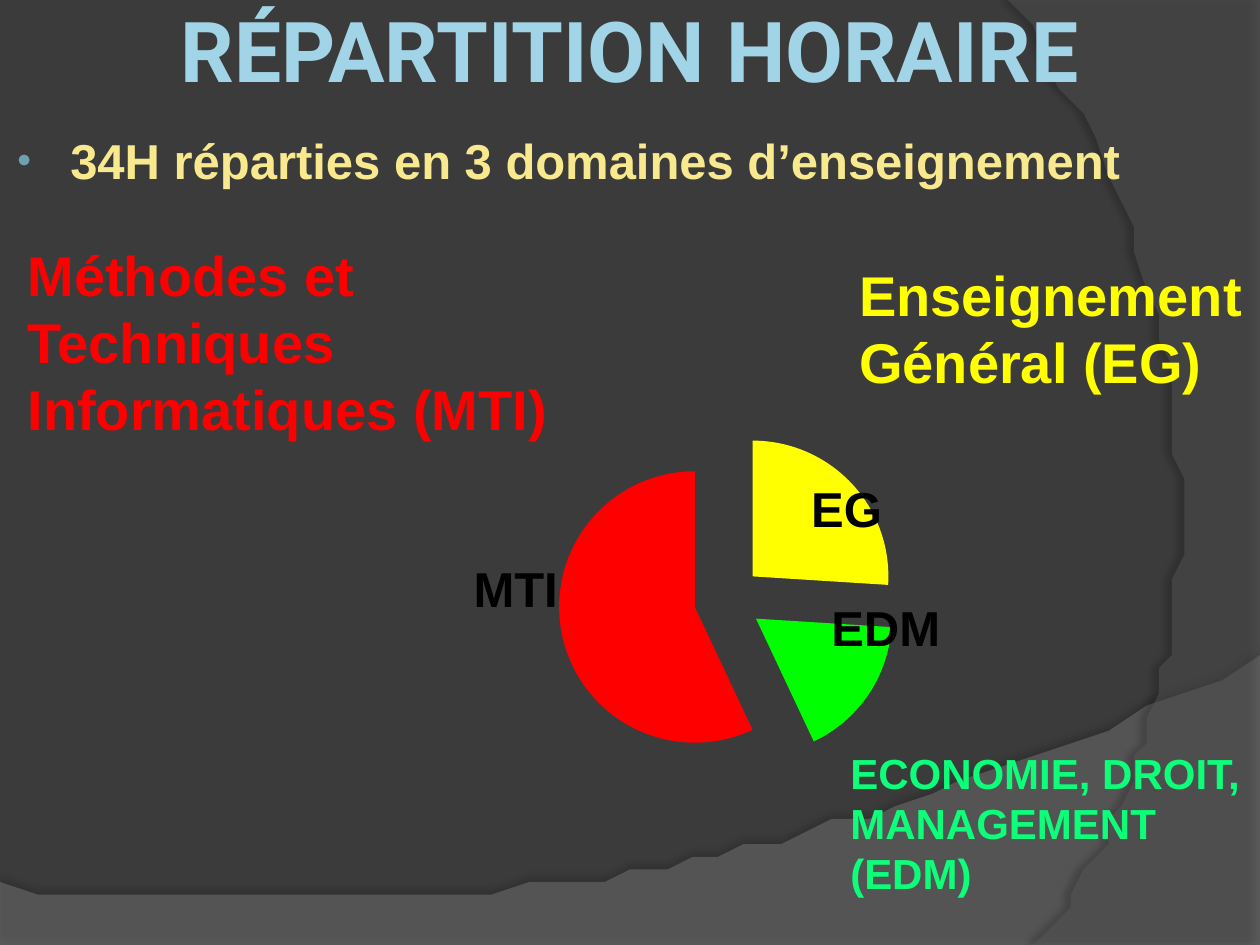
"""Build the slide on how 34 weekly hours split over three teaching domains."""
from lxml import etree
from pptx import Presentation
from pptx.chart.data import CategoryChartData as ChartData
from pptx.dml.color import RGBColor
from pptx.enum.chart import XL_CHART_TYPE as ChartType
from pptx.enum.text import MSO_ANCHOR as Anchor, MSO_AUTO_SIZE as AutoSize, PP_ALIGN as Align
from pptx.oxml import parse_xml
from pptx.oxml.ns import qn
from pptx.util import Inches, Pt

NS_A = 'xmlns:a="http://schemas.openxmlformats.org/drawingml/2006/main"'
NS_C = 'xmlns:c="http://schemas.openxmlformats.org/drawingml/2006/chart"'

deck = Presentation()
deck.slide_width, deck.slide_height = Inches(10), Inches(7.5)
column, row = deck.slide_width / 100, deck.slide_height / 75
page = deck.slides.add_slide(deck.slide_layouts[6])


def paint(fill, color):
    fill.solid()
    fill.fore_color.rgb = RGBColor.from_string(color)


def add_text(text, place, size, color, font="Arial", wrap=True):
    left, top, width, height = place
    box = page.shapes.add_textbox(
        int(left * column), int(top * row), int(width * column), int(height * row))
    frame = box.text_frame
    frame.text = text
    frame.word_wrap = wrap
    frame.auto_size = AutoSize.SHAPE_TO_FIT_TEXT
    style = frame.paragraphs[0].runs[0].font
    style.name, style.size, style.bold = font, Pt(size), True
    paint(style.fill, color)
    return frame


paint(page.background.fill, "3B3B3B")

waves = [
    ([(0, 70.5), (0, 75), (100, 75), (100, 52)],
     [(100, 52), (55.9, 72.9), (39.1, 71.9), (0, 70.5)],
     "7F7F7F", 45, (35, 3.5, 270)),
    ([(80, 0), (100, 0.2), (100, 75), (82.1, 75)],
     [(82.1, 75), (93.5, 61.9), (101.8, 30), (80, 0)],
     "5E5E5E", 40, (45, 4, 180)),
]
for corners, curve, color, opacity, (shade, distance, angle) in waves:
    points = list(corners)
    for step in range(1, 40):
        t = step / 40
        weights = ((1 - t) ** 3, 3 * t * (1 - t) ** 2, 3 * t ** 2 * (1 - t), t ** 3)
        points.append(tuple(sum(w * p[axis] for w, p in zip(weights, curve)) for axis in (0, 1)))
    builder = page.shapes.build_freeform(*points[0], scale=(column, row))
    builder.add_line_segments(points[1:], close=True)
    wave = builder.convert_to_shape()
    paint(wave.fill, color)
    wave.line.fill.background()
    tint = wave.fill._xPr.find(qn("a:solidFill"))[0]
    etree.SubElement(tint, qn("a:alpha"), val=str(opacity * 1000))
    wave._element.spPr.append(parse_xml(
        f'<a:effectLst {NS_A}><a:outerShdw blurRad="{Pt(4)}" dist="{Pt(distance)}" '
        f'dir="{angle * 60000}" algn="ctr" rotWithShape="0"><a:srgbClr val="000000">'
        f'<a:alpha val="{shade * 1000}"/></a:srgbClr></a:outerShdw></a:effectLst>'))

title = add_text("RÉPARTITION HORAIRE", (0, 0, 100, 7.8), 48, "A1D4E7", "Roboto")
title.auto_size = AutoSize.NONE
title.vertical_anchor = Anchor.MIDDLE
title.margin_left = title.margin_right = Inches(0.05)
title.paragraphs[0].alignment = Align.CENTER

summary = add_text("34H réparties en 3 domaines d’enseignement", (0, 9.9, 100, 6.3), 28, "F9E98E")
summary.auto_size = AutoSize.NONE
para = summary.paragraphs[0]
para.space_before = Pt(5.6)
bullet = para._p.get_or_add_pPr()
bullet.set("marL", str(Inches(0.46)))
bullet.set("indent", str(Inches(-0.42)))
etree.SubElement(etree.SubElement(bullet, qn("a:buClr")), qn("a:srgbClr"), val="6EA0B0")
etree.SubElement(bullet, qn("a:buSzPct"), val="80000")
etree.SubElement(bullet, qn("a:buFont"), typeface="Arial")
etree.SubElement(bullet, qn("a:buChar"), char="•")

hours = ChartData()
hours.categories = ["1", "2", "3"]
hours.add_series("Series 1", (26, 17, 57))
chart = page.shapes.add_chart(
    ChartType.PIE, int(7.5 * column), int(28.1 * row),
    int(90.6 * column), int(40.2 * row), hours).chart
chart.has_legend = chart.has_title = False
chart.font.name, chart.font.size, chart.font.bold = "Lato", Pt(23.6), True
paint(chart.font.fill, "FFFFFF")
pie = chart.plots[0]
pie.vary_by_categories = True
series = pie.series[0]
for index, color in enumerate(("FFFF00", "00FF00", "FF0000")):
    slice_format = series.points[index].format
    paint(slice_format.fill, color)
    slice_format.line.fill.background()
series._element.find(qn("c:dPt")).addprevious(parse_xml(f'<c:explosion {NS_C} val="25"/>'))
plot_area = chart._chartSpace.chart.plotArea
for layout in plot_area.findall(qn("c:layout")):
    plot_area.remove(layout)
plot_area.insert(0, parse_xml(
    f'<c:layout {NS_C}><c:manualLayout><c:layoutTarget val="inner"/>'
    '<c:xMode val="edge"/><c:yMode val="edge"/><c:x val="0.16"/><c:y val="0.15"/>'
    '<c:w val="0.79"/><c:h val="0.67"/></c:manualLayout></c:layout>'))

for text, place, size, color in (
    ("ECONOMIE, DROIT, MANAGEMENT (EDM)", (66.5, 58.8, 33.5, 13.1), 24, "0DFF7A"),
    ("Méthodes et Techniques Informatiques (MTI)", (1.2, 18.6, 44.1, 17.2), 32, "FF0000"),
    ("Enseignement Général (EG)", (67.2, 20.2, 32.8, 11.8), 32, "FFFF00"),
):
    add_text(text, place, size, color)

for text, left, top, width in (("MTI", 36.6, 43.8, 8.8), ("EDM", 65, 46.9, 10.7), ("EG", 63.4, 37.5, 7.7)):
    add_text(text, (left, top, width, 5.7), 28, "000000", wrap=False)

deck.save("out.pptx")
